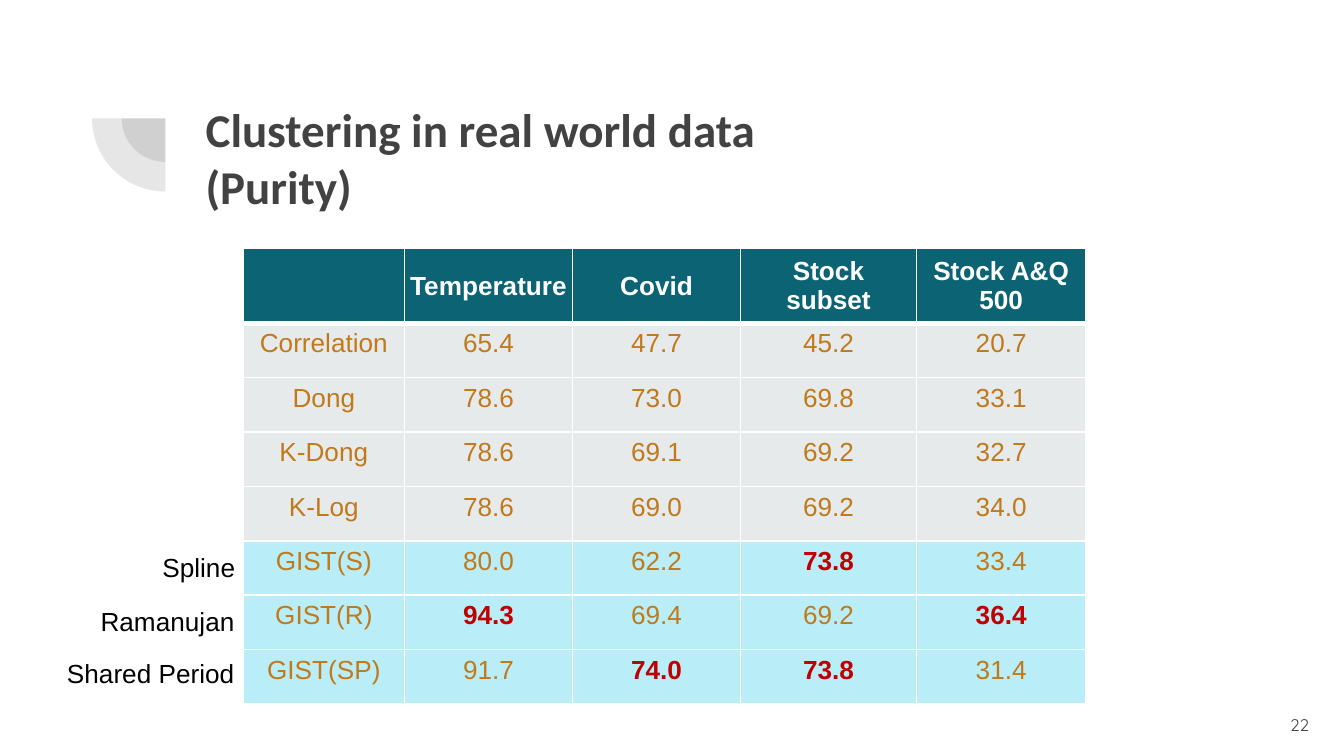
"""Build a slide with a table of clustering purity on real world data."""
from lxml import etree
from pptx import Presentation
from pptx.dml.color import RGBColor
from pptx.enum import shapes, text
from pptx.oxml import ns
from pptx.util import Inches, Pt

GREY = RGBColor(0x42, 0x42, 0x42)
TEAL = RGBColor(0x0B, 0x63, 0x74)
PALE_GREY = RGBColor(0xE7, 0xEA, 0xEB)
PALE_BLUE = RGBColor(0xB9, 0xEE, 0xF8)
OCHRE = RGBColor(0xC0, 0x79, 0x1B)
RED = RGBColor(0xC0, 0x00, 0x00)
WHITE = RGBColor(0xFF, 0xFF, 0xFF)
BLACK = RGBColor(0x00, 0x00, 0x00)

HEADER = ["", "Temperature", "Covid", "Stock\nsubset", "Stock A&Q 500"]
RESULTS = [
    ["Correlation", "65.4", "47.7", "45.2", "20.7"],
    ["Dong", "78.6", "73.0", "69.8", "33.1"],
    ["K-Dong", "78.6", "69.1", "69.2", "32.7"],
    ["K-Log", "78.6", "69.0", "69.2", "34.0"],
    ["GIST(S)", "80.0", "62.2", "73.8", "33.4"],
    ["GIST(R)", "94.3", "69.4", "69.2", "36.4"],
    ["GIST(SP)", "91.7", "74.0", "73.8", "31.4"],
]
COLUMN_WIDTHS = [1.2, 1.25, 1.25, 1.31, 1.26]
TABLE_HEIGHT = 3.24
METHOD_NOTES = [("Spline", 1.11, 4.05, 0.75), ("Ramanujan", 0.65, 4.45, 1.2),
                ("Shared Period", 0.4, 4.84, 1.45)]


class SlideBuilder:
    """Holds the style and the current slide."""

    def __init__(self, slide):
        self.slide = slide
        self.table_font = "Arial"
        self.table_size = 14

    def style(self, paragraph, name, size, color, bold=False, align=text.PP_ALIGN.LEFT):
        paragraph.alignment = align
        font = paragraph.font
        font.name, font.size, font.bold = name, Pt(size), bold
        font.color.rgb = color

    def title(self, words, left, top, width, height):
        shape = self.slide.shapes.title
        shape.left, shape.top = Inches(left), Inches(top)
        shape.width, shape.height = Inches(width), Inches(height)
        frame = shape.text_frame
        frame.text = words
        frame.auto_size = text.MSO_AUTO_SIZE.NONE
        frame.vertical_anchor = text.MSO_ANCHOR.TOP
        frame.margin_left = frame.margin_right = Inches(0.1)
        frame.margin_top = frame.margin_bottom = Inches(0.1)
        self.style(frame.paragraphs[0], "Calibri", 25.2, GREY, bold=True)

    def quarter(self, center_x, center_y, radius):
        shape = self.slide.shapes.add_shape(
            shapes.MSO_SHAPE.PIE, Inches(center_x - radius), Inches(center_y - radius),
            Inches(2 * radius), Inches(2 * radius))
        shape.rotation = 270
        shape.adjustments[0], shape.adjustments[1] = 108, 162
        shape.shadow.inherit = False
        shape.line.fill.background()
        shape.fill.solid()
        shape.fill.fore_color.rgb = GREY
        color = shape.fill._xPr.find(".//" + ns.qn("a:srgbClr"))
        etree.SubElement(color, ns.qn("a:alpha"), val="13000")

    def label(self, words, left, top, width, height, name, size, color,
              align=text.PP_ALIGN.LEFT):
        box = self.slide.shapes.add_textbox(
            Inches(left), Inches(top), Inches(width), Inches(height))
        frame = box.text_frame
        frame.text = words
        frame.word_wrap = False
        frame.vertical_anchor = text.MSO_ANCHOR.MIDDLE
        self.style(frame.paragraphs[0], name, size, color, align=align)

    def borders(self, cell, bottom):
        properties = cell._tc.get_or_add_tcPr()
        for side, points in (("L", 1), ("R", 1), ("T", 1), ("B", bottom)):
            line = etree.SubElement(properties, ns.qn("a:ln" + side), w=str(Pt(points)))
            fill = etree.SubElement(line, ns.qn("a:solidFill"))
            etree.SubElement(fill, ns.qn("a:srgbClr"), val=str(WHITE))

    def cell(self, cell, words, fill, color, bold, header):
        self.borders(cell, 3 if header else 1)
        cell.fill.solid()
        cell.fill.fore_color.rgb = fill
        cell.margin_left = cell.margin_right = 0
        cell.margin_top = cell.margin_bottom = Pt(3.2)
        cell.vertical_anchor = text.MSO_ANCHOR.MIDDLE if header else text.MSO_ANCHOR.TOP
        cell.text = words
        for paragraph in cell.text_frame.paragraphs:
            self.style(paragraph, self.table_font, self.table_size, color, bold,
                       text.PP_ALIGN.CENTER)

    def table(self, left, top):
        table = self.slide.shapes.add_table(
            len(RESULTS) + 1, len(HEADER), Inches(left), Inches(top),
            Inches(sum(COLUMN_WIDTHS)), Inches(TABLE_HEIGHT)).table
        for column, width in zip(table.columns, COLUMN_WIDTHS):
            column.width = Inches(width)
        for j, words in enumerate(HEADER):
            self.cell(table.cell(0, j), words, TEAL, WHITE, True, True)
        best = [max(column, key=float) for column in list(zip(*RESULTS))[1:]]
        for i, values in enumerate(RESULTS, start=1):
            fill = PALE_BLUE if values[0].startswith("GIST") else PALE_GREY
            for j, words in enumerate(values):
                wins = j > 0 and words == best[j - 1]
                self.cell(table.cell(i, j), words, fill, RED if wins else OCHRE, wins, False)


def main():
    presentation = Presentation()
    presentation.slide_width = Inches(10)
    presentation.slide_height = Inches(10) * 9 // 16
    slide = presentation.slides.add_slide(presentation.slide_layouts[5])
    builder = SlideBuilder(slide)
    for radius in (0.325, 0.545):
        builder.quarter(1.23, 0.88, radius)
    builder.title("Clustering in real world data\v(Purity)", 1.43, 0.65, 7.69, 1.09)
    builder.label("22", 9.24, 5.18, 0.6, 0.43, "Quicksand", 9, GREY, text.PP_ALIGN.RIGHT)
    builder.table(1.81, 1.85)
    for words, left, top, width in METHOD_NOTES:
        builder.label(words, left, top, width, 0.34,
                      builder.table_font, builder.table_size, BLACK)
    presentation.save("out.pptx")


if __name__ == "__main__":
    main()
